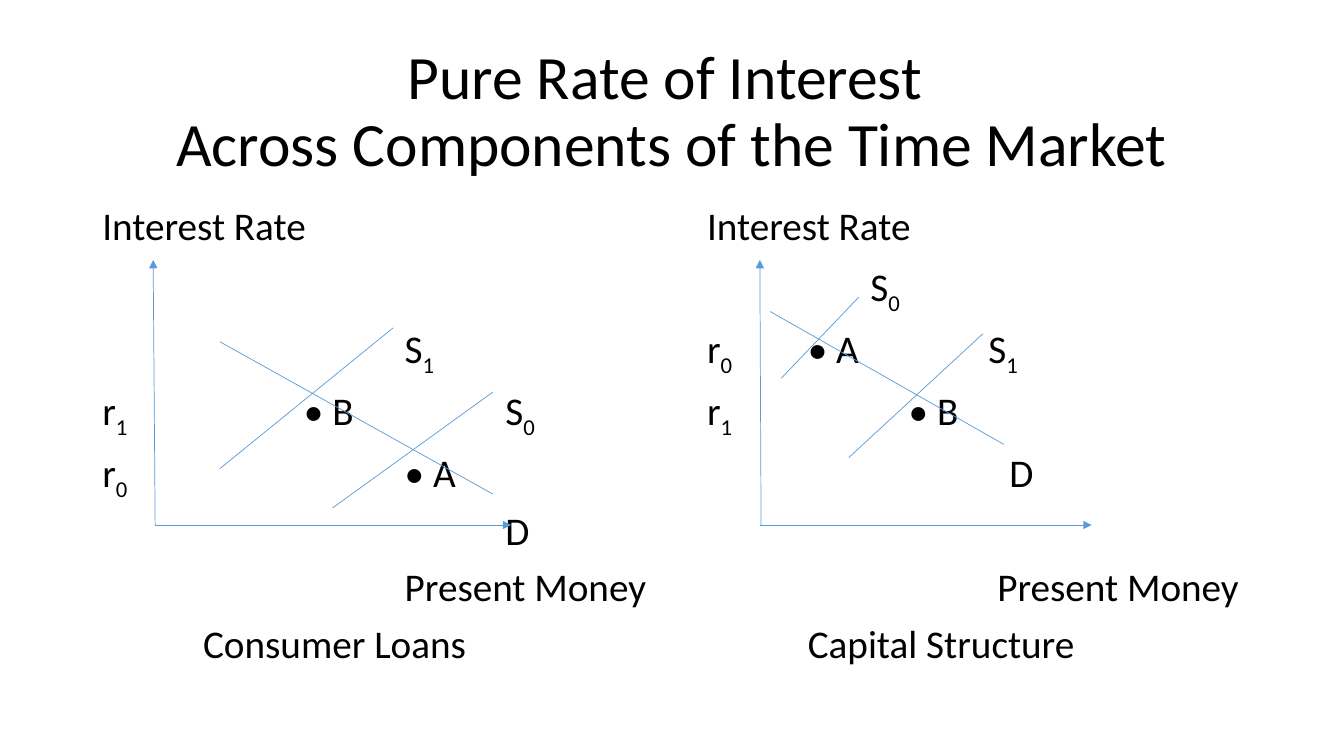
import dataclasses
import lxml.etree
import pptx
import pptx.dml.color
import pptx.enum.shapes
import pptx.enum.text
import pptx.oxml.ns
import pptx.util

Cm = pptx.util.Cm
Pt = pptx.util.Pt
qn = pptx.oxml.ns.qn


@dataclasses.dataclass(frozen=True)
class Theme:
    font: str = "Calibri"
    text: pptx.dml.color.RGBColor = pptx.dml.color.RGBColor(0, 0, 0)
    line: pptx.dml.color.RGBColor = pptx.dml.color.RGBColor(0x5B, 0x9B, 0xD5)
    title_size: pptx.util.Length = Pt(44)
    label_size: pptx.util.Length = Pt(28)
    line_width: pptx.util.Length = Pt(0.5)


theme = Theme()


def format_runs(p, size):
    p.line_spacing = 0.9
    for r in p.runs:
        r.font.name = theme.font
        r.font.size = size
        r.font.color.rgb = theme.text


prs = pptx.Presentation()
prs.slide_width = Cm(33.87)
prs.slide_height = Cm(19.05)
s = prs.slides.add_slide(prs.slide_layouts[5])

title = s.shapes.title
title.left, title.top, title.width, title.height = Cm(2.33), Cm(1.01), Cm(29.21), Cm(3.68)
tf = title.text_frame
tf.text = "Pure Rate of Interest \vAcross Components of the Time Market"
tf.word_wrap = True
tf.auto_size = pptx.enum.text.MSO_AUTO_SIZE.NONE
tf.vertical_anchor = pptx.enum.text.MSO_ANCHOR.MIDDLE
p = tf.paragraphs[0]
p.alignment = pptx.enum.text.PP_ALIGN.CENTER
format_runs(p, theme.title_size)

tab = 2.54
rows = [
    [(0, "Interest Rate", ""), (6, "Interest Rate", "")],
    [(7.62, "S", "0")],
    [(3, "S", "1"), (6, "r", "0"), (7, "• A", ""), (8.79, "S", "1")],
    [(0, "r", "1"), (2, "• B", ""), (4, "S", "0"), (6, "r", "1"), (8, "• B", "")],
    [(0, "r", "0"), (3, "• A", ""), (9, "D", "")],
    [(4, "D", "")],
    [(3, "Present Money", ""), (8.88, "Present Money", "")],
    [(1, "Consumer Loans", ""), (7, "Capital Structure", "")],
]

sp = s.shapes.add_textbox(Cm(2.33), Cm(5.08), Cm(29.21), Cm(12.09))
tf = sp.text_frame
tf.word_wrap = True
for i, row in enumerate(rows):
    p = tf.add_paragraph() if i else tf.paragraphs[0]
    p.space_before = Pt(10)
    for column, label, subscript in row:
        r = p.add_run()
        r.text = "\t" + label if column else label
        if subscript:
            r = p.add_run()
            r.text = subscript
            r._r.get_or_add_rPr().set("baseline", "-25000")
    format_runs(p, theme.label_size)
    stops = lxml.etree.SubElement(p._p.get_or_add_pPr(), qn("a:tabLst"))
    for column, label, subscript in row:
        if column:
            lxml.etree.SubElement(stops, qn("a:tab"), pos=str(int(Cm(column * tab))), algn="l")

axes = [
    (3.91, 13.23, 3.86, 6.55), (3.91, 13.23, 12.88, 13.23),
    (19.18, 13.23, 19.15, 6.55), (19.15, 13.23, 27.51, 13.23),
]
curves = [
    (5.54, 8.61, 12.42, 12.45), (8.38, 12.8, 12.42, 9.88), (5.54, 11.81, 9.91, 8.26),
    (19.41, 7.85, 25.3, 11.2), (19.69, 9.53, 21.64, 7.49), (21.39, 11.53, 24.77, 8.41),
]
for ends in axes + curves:
    c = s.shapes.add_connector(pptx.enum.shapes.MSO_CONNECTOR.STRAIGHT, *map(Cm, ends))
    c.line.color.rgb = theme.line
    c.line.width = theme.line_width
    if ends in axes:
        ln = c._element.spPr.find(qn("a:ln"))
        lxml.etree.SubElement(ln, qn("a:tailEnd"), type="triangle")
    lxml.etree.SubElement(c._element.spPr, qn("a:effectLst"))

prs.save("out.pptx")
